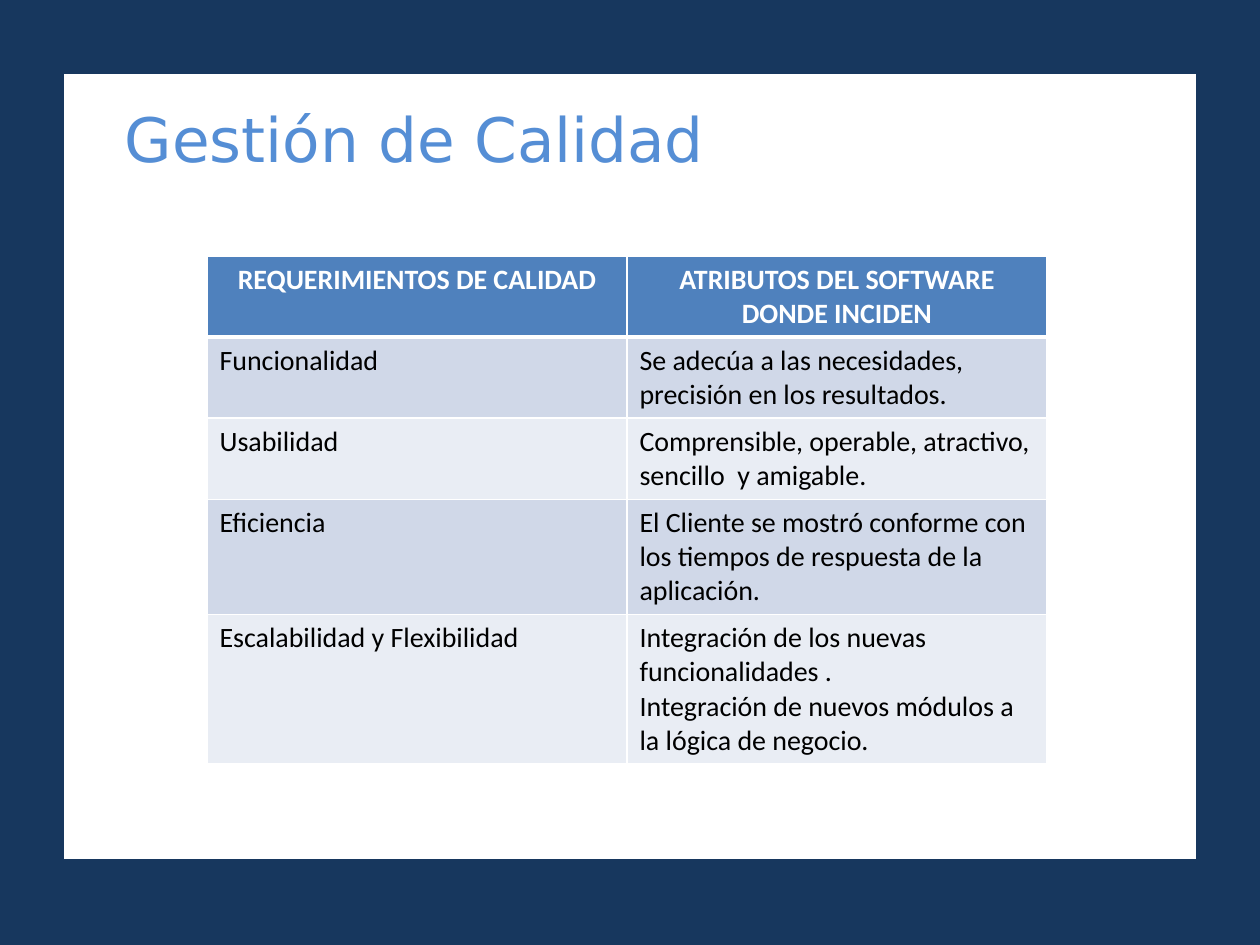
"""Build the quality management slide with its requirements table."""
from lxml.etree import SubElement
from pptx import Presentation
from pptx.dml.color import RGBColor
from pptx.enum.shapes import MSO_SHAPE
from pptx.enum.text import MSO_ANCHOR, PP_ALIGN
from pptx.oxml.ns import qn
from pptx.util import Emu, Pt

PIXEL = 914400 // 126
WHITE, NAVY = "FFFFFF", "17375E"


def color(value):
    return RGBColor.from_string(value)


def add_border(cell, side, points):
    properties = cell._tc.get_or_add_tcPr()
    line = SubElement(properties, qn(f"a:ln{side}"), w=str(Pt(points)))
    fill = SubElement(line, qn("a:solidFill"))
    SubElement(fill, qn("a:srgbClr"), val=WHITE)


presentation = Presentation()
presentation.slide_width = Emu(1260 * PIXEL)
presentation.slide_height = Emu(945 * PIXEL)
slide = presentation.slides.add_slide(presentation.slide_layouts[5])
slide.background.fill.solid()
slide.background.fill.fore_color.rgb = color(NAVY)

panel = slide.shapes.add_shape(
    MSO_SHAPE.RECTANGLE, *(Emu(value * PIXEL) for value in (63, 73, 1134, 787))
)
panel.shadow.inherit = False
panel.fill.solid()
panel.fill.fore_color.rgb = color(WHITE)
panel.line.color.rgb = color(NAVY)
panel.line.width = Pt(0.75)

title = slide.shapes.title
title.element.addprevious(panel.element)
title.left, title.top, title.width, title.height = (
    Emu(value * PIXEL) for value in (112, 94, 1061, 87)
)
title.text_frame.word_wrap = True
title.text_frame.vertical_anchor = MSO_ANCHOR.MIDDLE
paragraph = title.text_frame.paragraphs[0]
paragraph.alignment = PP_ALIGN.LEFT
run = paragraph.add_run()
run.text = "Gestión de Calidad"
run.font.name = "DejaVu Sans"
run.font.size = Pt(35)
run.font.color.rgb = color("558ED5")

rows = [
    (78, "REQUERIMIENTOS DE CALIDAD", ["ATRIBUTOS DEL SOFTWARE DONDE INCIDEN"]),
    (80, "Funcionalidad", ["Se adecúa a las necesidades, precisión en los resultados."]),
    (80, "Usabilidad", ["Comprensible, operable, atractivo, sencillo  y amigable."]),
    (113, "Eficiencia", [
        "El Cliente se mostró conforme con los tiempos de respuesta de la aplicación.",
    ]),
    (147, "Escalabilidad y Flexibilidad", [
        "Integración de los nuevas funcionalidades .",
        "Integración de nuevos módulos a la lógica de negocio.",
    ]),
]
table_height = sum(height for height, _, _ in rows)
table = slide.shapes.add_table(
    len(rows), 2, *(Emu(value * PIXEL) for value in (207, 256, 840, table_height))
).table

for row_index, (height, requirement, attributes) in enumerate(rows):
    is_header = row_index == 0
    table.rows[row_index].height = Emu(height * PIXEL)
    background = "4F81BD" if is_header else ("E9EDF4", "D0D8E8")[row_index % 2]
    for column_index, texts in enumerate(([requirement], attributes)):
        cell = table.cell(row_index, column_index)
        for side in "LRTB":
            thick = (is_header and side == "B") or (row_index == 1 and side == "T")
            add_border(cell, side, 3 if thick else 1)
        cell.fill.solid()
        cell.fill.fore_color.rgb = color(background)
        for text_index, text in enumerate(texts):
            frame = cell.text_frame
            paragraph = frame.add_paragraph() if text_index else frame.paragraphs[0]
            paragraph.alignment = PP_ALIGN.CENTER if is_header else PP_ALIGN.LEFT
            run = paragraph.add_run()
            run.text = text
            run.font.name = "Calibri"
            run.font.size = Pt(16)
            run.font.bold = is_header
            run.font.color.rgb = color(WHITE if is_header else "000000")

presentation.save("out.pptx")
